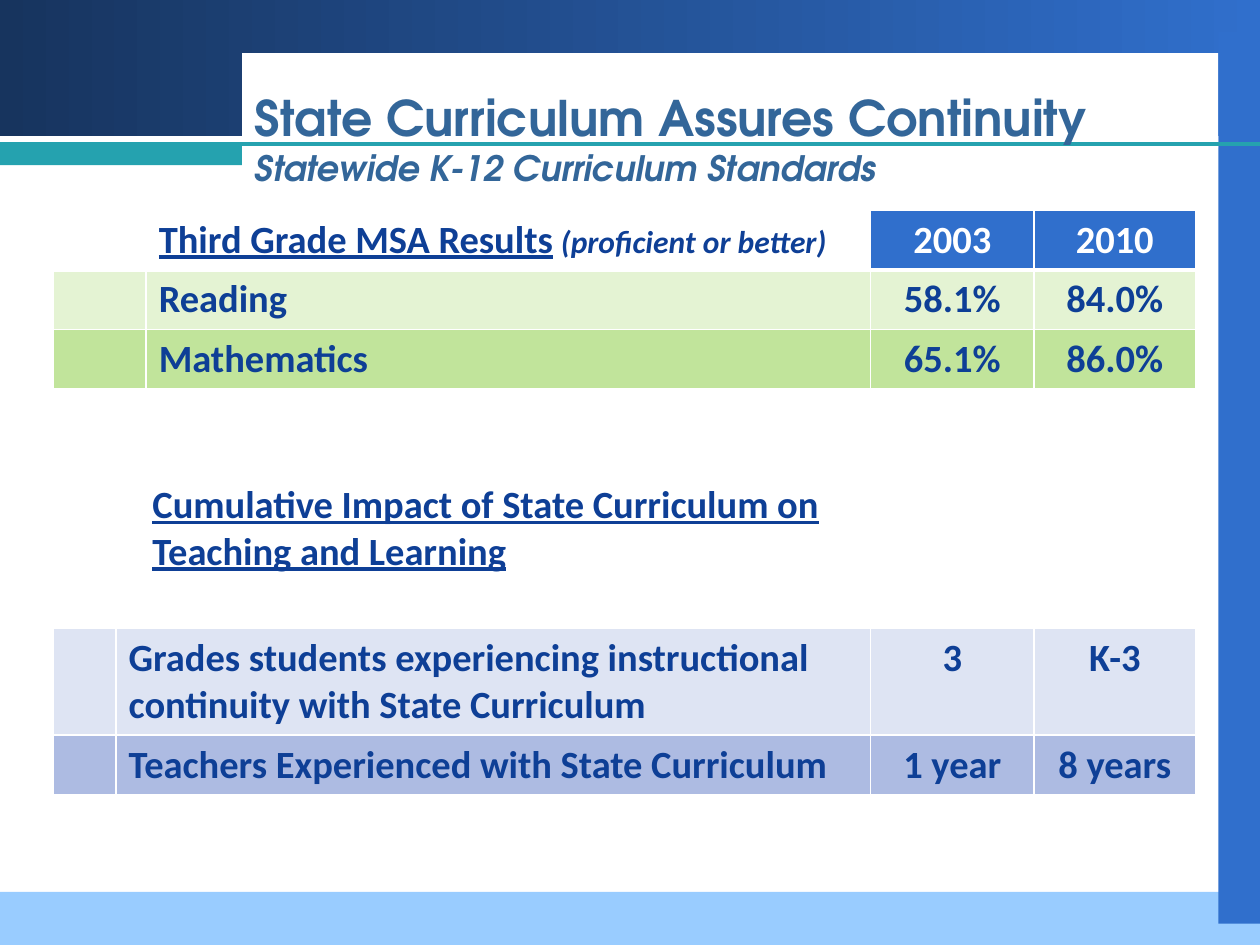
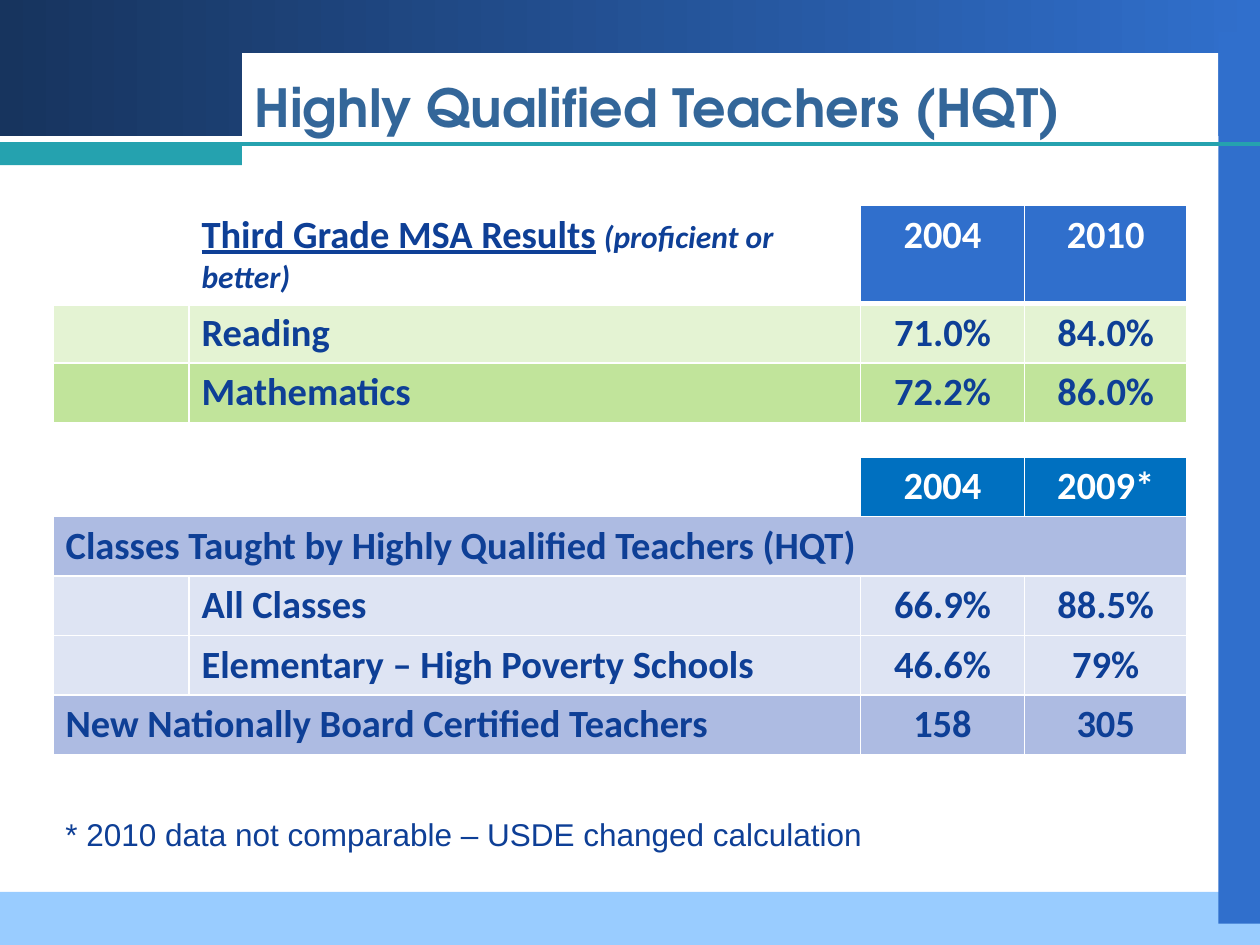
import pptx
import pptx.dml.color
import pptx.enum.shapes
import pptx.enum.text
import pptx.oxml
import pptx.oxml.ns
import pptx.util
from lxml import etree

Cm = pptx.util.Cm
Pt = pptx.util.Pt
RGBColor = pptx.dml.color.RGBColor
ALIGN = pptx.enum.text.PP_ALIGN
ANCHOR = pptx.enum.text.MSO_ANCHOR
qn = pptx.oxml.ns.qn

# Colours and fonts
WHITE = RGBColor(0xFF, 0xFF, 0xFF)
NAVY = RGBColor(0x17, 0x34, 0x5E)
BLUE = RGBColor(0x30, 0x6F, 0xCC)
DEEP_BLUE = RGBColor(0x00, 0x70, 0xC0)
SKY = RGBColor(0x99, 0xCC, 0xFF)
TEAL = RGBColor(0x25, 0xA2, 0xAF)
TITLE_BLUE = RGBColor(0x33, 0x66, 0x99)
INK = RGBColor(0x0E, 0x3F, 0x96)
PALE_GREEN = RGBColor(0xE4, 0xF3, 0xD3)
GREEN = RGBColor(0xC1, 0xE4, 0x9B)
PALE_LILAC = RGBColor(0xDE, 0xE4, 0xF3)
LILAC = RGBColor(0xAD, 0xBB, 0xE2)
TITLE_FONT, TABLE_FONT, NOTE_FONT = "TeX Gyre Adventor", "Calibri", "Arial"

# Row kinds: label fill, value fill, value text colour
ROW_KINDS = {
    "scores": (WHITE, BLUE, WHITE),
    "years": (WHITE, DEEP_BLUE, WHITE),
    "pale green": (PALE_GREEN, PALE_GREEN, INK),
    "green": (GREEN, GREEN, INK),
    "pale lilac": (PALE_LILAC, PALE_LILAC, INK),
    "lilac": (LILAC, LILAC, INK),
    "gap": (WHITE, WHITE, INK),
    "heading": (WHITE, WHITE, INK),
}
LINE_ROW = 1.2  # height of a row with one line of text, cm

# Label cell with mixed formatting: text, size, underline, italic
MSA_RESULTS = [
    ("Third Grade MSA Results", 22, True, False),
    (" ", 20, False, True),
    ("(proficient or better)", 18, False, True),
]

# Content; a row is kind, height, {column: text}, {first merged column: last}
SLIDES = [
    {
        "title": [("State Curriculum Assures Continuity", 28, False),
                  ("Statewide K-12 Curriculum Standards", 20, True)],
        "title_box": (4.88, 1.35, 20.12, 2.87),
        "title_spacing": None,
        "table_top": 4.24,
        "columns": [1.27, 0.58, 14.6, 3.3, 3.25],
        "rows": [
            ("scores", LINE_ROW, {2: MSA_RESULTS, 3: "2003", 4: "2010"}, {0: 1}),
            ("pale green", LINE_ROW, {2: "Reading", 3: "58.1%", 4: "84.0%"}, {0: 1}),
            ("green", LINE_ROW, {2: "Mathematics", 3: "65.1%", 4: "86.0%"}, {0: 1}),
            ("gap", 0.48, {}, {0: 1}),
            ("gap", 1.27, {}, {0: 1}),
            ("heading", 3.08, {0: "Cumulative Impact of State Curriculum on\n"
                                  "Teaching and Learning"}, {0: 4}),
            ("pale lilac", 2.15, {1: "Grades students experiencing instructional "
                                     "continuity with State Curriculum",
                                  3: "3", 4: "K-3"}, {1: 2}),
            ("lilac", LINE_ROW, {1: "Teachers Experienced with State Curriculum",
                                 3: "1 year", 4: "8 years"}, {1: 2}),
        ],
        "note": None,
    },
    {
        "title": [("Highly Qualified Teachers (HQT)", 30, False)],
        "title_box": (4.88, 1.14, 20.12, 2.03),
        "title_spacing": 36,
        "table_top": 4.14,
        "columns": [2.74, 13.54, 3.3, 3.28],
        "rows": [
            ("scores", 1.97, {1: MSA_RESULTS, 2: "2004", 3: "2010"}, {}),
            ("pale green", LINE_ROW, {1: "Reading", 2: "71.0%", 3: "84.0%"}, {}),
            ("green", LINE_ROW, {1: "Mathematics", 2: "72.2%", 3: "86.0%"}, {}),
            ("gap", 0.7, {}, {}),
            ("years", LINE_ROW, {2: "2004", 3: "2009*"}, {}),
            ("lilac", LINE_ROW,
             {0: "Classes Taught by Highly Qualified Teachers (HQT)"}, {0: 3}),
            ("pale lilac", LINE_ROW, {1: "All Classes", 2: "66.9%", 3: "88.5%"}, {}),
            ("pale lilac", LINE_ROW, {1: "Elementary – High Poverty Schools",
                                      2: "46.6%", 3: "79%"}, {}),
            ("lilac", LINE_ROW, {0: "New Nationally Board Certified Teachers",
                                 2: "158", 3: "305"}, {0: 1}),
        ],
        "note": "* 2010 data not comparable – USDE changed calculation",
    },
]
LEFT = 1.07
NOTE_BOX = (LEFT, 16.3, 18.42, 1.02)

# Bands behind every slide: left, top, width, height, fill
TOP_BAND = (0, 0, 25.4, 2.74, BLUE)
BANDS = [
    (0, 17.98, 25.4, 1.07, SKY),
    (24.56, 0.64, 0.84, 17.98, BLUE),
    (4.88, 1.07, 19.68, 1.91, WHITE),
    (0, 2.9, 4.88, 0.43, TEAL),
]
RULE_TOP = 2.9


def style(font, name, size, color, bold=True, italic=False, underline=False):
    font.name, font.size, font.color.rgb = name, Pt(size), color
    font.bold, font.italic, font.underline = bold, italic, underline


def add_band(slide, left, top, width, height, color):
    band = slide.shapes.add_shape(pptx.enum.shapes.MSO_SHAPE.RECTANGLE,
                                  Cm(left), Cm(top), Cm(width), Cm(height))
    band.shadow.inherit = False
    band.fill.solid()
    band.fill.fore_color.rgb = color
    band.line.fill.background()
    return band


def add_backdrop(slide, layout):
    """Draw the bands and move them to the layout, which all slides share."""
    top_band = add_band(slide, *TOP_BAND)
    top_band.fill.gradient()
    top_band.fill.gradient_angle = 0
    for stop, color in zip(top_band.fill.gradient_stops, (NAVY, BLUE)):
        stop.color.rgb = color
    parts = [top_band] + [add_band(slide, *band) for band in BANDS]
    rule = slide.shapes.add_connector(pptx.enum.shapes.MSO_CONNECTOR.STRAIGHT,
                                      0, Cm(RULE_TOP), Cm(25.4), Cm(RULE_TOP))
    rule.line.color.rgb, rule.line.width = TEAL, Pt(2.25)
    etree.SubElement(rule.element.spPr, qn("a:effectLst"))
    parts.append(rule)
    for place, part in enumerate(parts, start=2):
        layout.shapes.element.insert(place, part.element)


def fill_title(slide, content):
    title = slide.shapes.title
    title.left, title.top, title.width, title.height = map(Cm, content["title_box"])
    frame = title.text_frame
    frame.text = "\n".join(line for line, size, italic in content["title"])
    frame.vertical_anchor = ANCHOR.MIDDLE
    frame.auto_size = pptx.enum.text.MSO_AUTO_SIZE.NONE
    for para, (line, size, italic) in zip(frame.paragraphs, content["title"]):
        para.alignment = ALIGN.LEFT
        if content["title_spacing"]:
            para.line_spacing = Pt(content["title_spacing"])
        style(para.runs[0].font, TITLE_FONT, size, TITLE_BLUE, italic=italic)


def set_borders(cell, top, bottom):
    properties = cell._tc.get_or_add_tcPr()
    for side, points in (("L", 1), ("R", 1), ("T", top), ("B", bottom)):
        line = etree.SubElement(properties, qn("a:ln" + side), w=str(Pt(points)))
        solid = etree.SubElement(line, qn("a:solidFill"))
        etree.SubElement(solid, qn("a:srgbClr"), val=str(WHITE))


def fill_cell(cell, text, color, centred, heading):
    frame = cell.text_frame
    if not text:  # small type keeps the narrow rows narrow
        etree.SubElement(frame.paragraphs[0]._p, qn("a:endParaRPr"), sz="400")
    elif isinstance(text, list):
        for words, size, underline, italic in text:
            span = frame.paragraphs[0].add_run()
            span.text = words
            style(span.font, TABLE_FONT, size, color, True, italic, underline)
    else:
        frame.text = text
        for para in frame.paragraphs:
            para.alignment = ALIGN.CENTER if centred else ALIGN.LEFT
            style(para.runs[0].font, TABLE_FONT, 22, color, underline=heading)
            if heading:
                para._p.get_or_add_pPr().set("marL", str(Cm(1.75)))


def add_results_table(slide, content):
    columns, rows = content["columns"], content["rows"]
    height = sum(row[1] for row in rows)
    table = slide.shapes.add_table(len(rows), len(columns), Cm(LEFT),
                                   Cm(content["table_top"]), Cm(sum(columns)),
                                   Cm(height)).table
    table.first_row = table.horz_banding = False
    for column, width in zip(table.columns, columns):
        column.width = Cm(width)
    first_value = len(columns) - 2
    for r, (kind, row_height, texts, merges) in enumerate(rows):
        table.rows[r].height = Cm(row_height)
        label_fill, value_fill, value_color = ROW_KINDS[kind]
        for c in range(len(columns)):
            cell = table.cell(r, c)
            is_value = c >= first_value
            set_borders(cell, 3 if r == 1 else 1, 3 if r == 0 else 1)
            cell.fill.solid()
            cell.fill.fore_color.rgb = value_fill if is_value else label_fill
            fill_cell(cell, texts.get(c), value_color if is_value else INK,
                      is_value, kind == "heading")
        for first, last in merges.items():
            table.cell(r, first).merge(table.cell(r, last))


def add_note(slide, text):
    box = slide.shapes.add_textbox(*map(Cm, NOTE_BOX))
    box.text_frame.word_wrap = True
    box.text_frame.text = text
    style(box.text_frame.paragraphs[0].runs[0].font, NOTE_FONT, 18, INK, bold=False)


def main():
    deck = pptx.Presentation()
    deck.slide_width, deck.slide_height = Cm(25.4), Cm(19.05)
    layout = deck.slide_layouts[5]
    for number, content in enumerate(SLIDES):
        slide = deck.slides.add_slide(layout)
        if number == 0:
            add_backdrop(slide, layout)
        fill_title(slide, content)
        add_results_table(slide, content)
        if content["note"]:
            add_note(slide, content["note"])
    deck.save("out.pptx")


if __name__ == "__main__":
    main()
